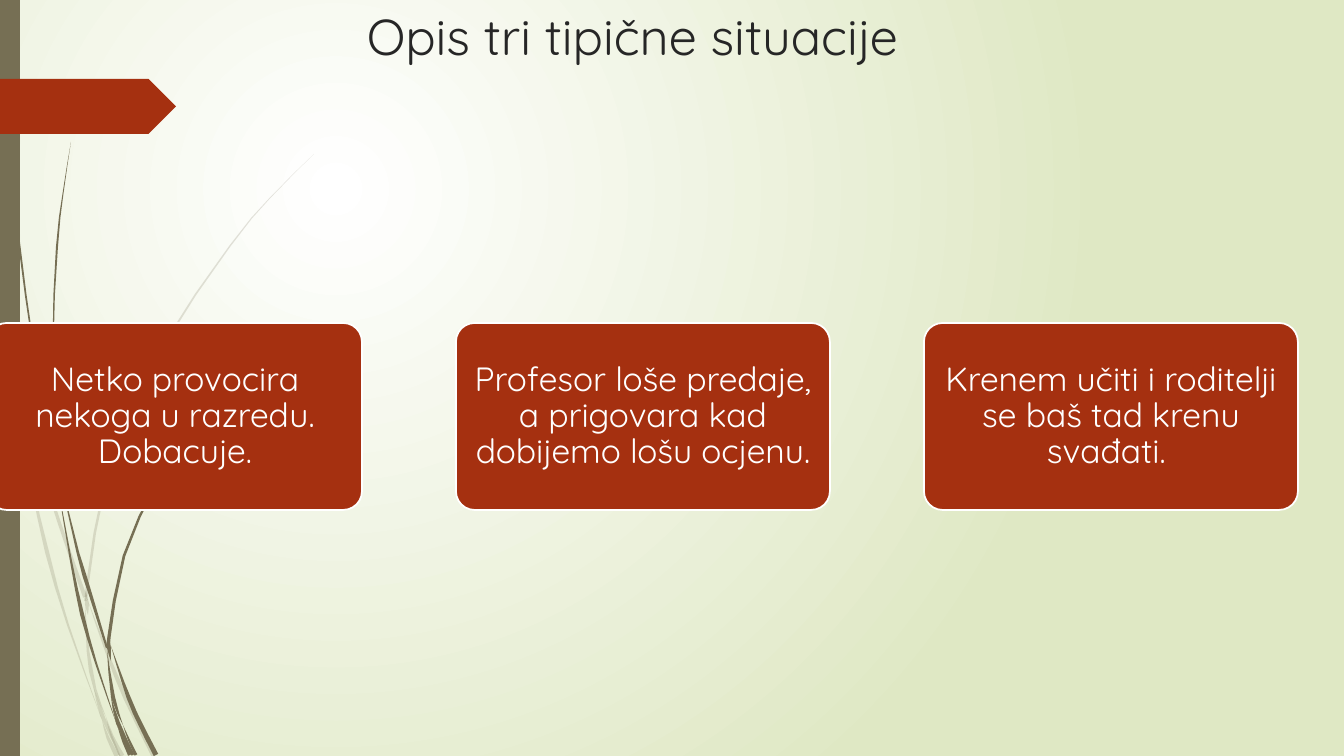
import math

import pptx
import pptx.dml.color
import pptx.enum.shapes
import pptx.enum.text
import pptx.oxml
import pptx.oxml.ns
import pptx.util

TITLE = "Opis tri tipične situacije"
SITUATIONS = [
    "Netko provocira nekoga u razredu. Dobacuje.",
    "Profesor loše predaje, a prigovara kad dobijemo lošu ocjenu.",
    "Krenem učiti i roditelji se baš tad krenu svađati. ",
]
FONT = "Quicksand"
OLIVE, RUST, WHITE, INK, PALE_GREEN = "766F54", "A53010", "FFFFFF", "262626", "DFE8C4"

PALE_BLADES = [
    ((5, 3, 0), [(0, 293), (5, 320), (11, 353)]),
    ((0, 3, 4), [(14, 348), (38, 453), (60, 525), (85, 597)]),
    ((0, 4, 5), [(88, 601), (107, 653), (126, 699), (154, 756)]),
    ((0, 3, 5), [(106, 717), (112, 736), (122, 756)]),
    ((0, 4, 0), [(11, 353), (30, 473), (47, 552), (68, 625), (102, 720)]),
    ((0, 4, 0), [(85, 604), (88, 651), (95, 689), (106, 717)]),
    ((0, 2, 3), [(314, 154), (270, 198), (230, 246), (160, 351),
                 (109, 465), (87, 588), (87, 599)]),
    ((0, 3, 5), [(102, 720), (108, 738), (117, 756)]),
    ((0, 4, 0), [(86, 591), (87, 604), (88, 615)]),
    ((0, 4, 1), [(94, 689), (102, 715), (120, 756)]),
]
DARK_BLADES = [
    ((1, 2, 1), [(3, 0), (6, 110), (18, 234), (35, 358), (57, 485)]),
    ((0, 4, 2), [(60, 476), (78, 553), (91, 596), (107, 648)]),
    ((0, 4, 5), [(111, 646), (123, 682), (135, 713), (156, 755)]),
    ((0, 4, 0), [(57, 481), (71, 561), (82, 614), (96, 663), (118, 728)]),
    ((0, 2, 0), [(71, 142), (63, 194), (57, 247), (53, 352), (60, 476)]),
    ((0, 2, 3), [(123, 725), (129, 740), (136, 755)]),
    ((0, 2, 4), [(262, 347), (232, 376), (206, 409), (159, 479),
                 (124, 556), (109, 637), (109, 645)]),
    ((0, 3, 4), [(118, 728), (124, 742), (130, 755)]),
    ((0, 4, 0), [(107, 650), (113, 697), (123, 725)]),
    ((0, 4, 0), [(109, 636), (109, 648), (111, 661)]),
    ((0, 4, 3), [(111, 697), (118, 723), (133, 755)]),
]
STEPS = 2

WIDTH, HEIGHT = 1344, 756
CARD_LEFT, CARD_TOP, CARD_WIDTH, CARD_HEIGHT, CARD_STEP = -12, 323, 374, 187, 468


def px(length):
    return pptx.util.Emu(round(length * 914400 / 100.8))


def rgb(value):
    return pptx.dml.color.RGBColor.from_string(value)


def paint(shape, color):
    shape.shadow.inherit = False
    shape.fill.solid()
    shape.fill.fore_color.rgb = rgb(color)
    shape.line.fill.background()


def add_block(slide, kind, left, top, width, height, color):
    shape = slide.shapes.add_shape(kind, px(left), px(top), px(width), px(height))
    paint(shape, color)
    return shape


def smooth(points):
    padded = [points[0], *points, points[-1]]
    curve = []
    for before, start, end, after in zip(padded, padded[1:], padded[2:], padded[3:]):
        for step in range(STEPS):
            t = step / STEPS
            curve.append(tuple(
                b + (c - a) * t / 2
                + (2 * a - 5 * b + 4 * c - d) * t**2 / 2
                + (3 * b - a - 3 * c + d) * t**3 / 2
                for a, b, c, d in zip(before, start, end, after)
            ))
    return curve + [points[-1]]


def width_at(widths, t):
    start, middle, end = widths
    if t < 0.5:
        return start + (middle - start) * 2 * t
    return middle + (end - middle) * (2 * t - 1)


def add_blade(slide, widths, points, opacity):
    curve = smooth(points)
    last = len(curve) - 1
    left_edge, right_edge = [], []
    for index, (x, y) in enumerate(curve):
        x1, y1 = curve[max(index - 1, 0)]
        x2, y2 = curve[min(index + 1, last)]
        half = width_at(widths, index / last) / 2
        length = math.hypot(x2 - x1, y2 - y1)
        dx, dy = (y2 - y1) * half / length, (x1 - x2) * half / length
        left_edge.append((px(x - dx), px(y - dy)))
        right_edge.append((px(x + dx), px(y + dy)))
    outline = left_edge + right_edge[::-1]
    builder = slide.shapes.build_freeform(*outline[0])
    builder.add_line_segments(outline[1:])
    shape = builder.convert_to_shape()
    paint(shape, OLIVE)
    color = shape.fill._xPr.find(".//" + pptx.oxml.ns.qn("a:srgbClr"))
    color.append(pptx.oxml.parse_xml(
        f'<a:alpha {pptx.oxml.ns.nsdecls("a")} val="{opacity * 1000}"/>'))


def set_background(slide):
    fill = slide.background.fill
    fill.gradient()
    for stop, color, position in zip(fill.gradient_stops, (WHITE, PALE_GREEN), (0, 1)):
        stop.color.rgb = rgb(color)
        stop.position = position
    linear = slide._element.find(".//" + pptx.oxml.ns.qn("a:lin"))
    radial = pptx.oxml.parse_xml(
        f'<a:path {pptx.oxml.ns.nsdecls("a")} path="circle">'
        '<a:fillToRect l="50000" t="50000" r="100000" b="100000"/></a:path>')
    linear.getparent().replace(linear, radial)


def write(shape, text, size, color, anchor):
    frame = shape.text_frame
    frame.text = text
    frame.word_wrap = True
    frame.auto_size = pptx.enum.text.MSO_AUTO_SIZE.NONE
    frame.vertical_anchor = anchor
    paragraph = frame.paragraphs[0]
    paragraph.alignment = pptx.enum.text.PP_ALIGN.CENTER
    paragraph.font.name = FONT
    paragraph.font.size = pptx.util.Pt(size)
    paragraph.font.color.rgb = rgb(color)
    return frame


def add_card(slide, index, text):
    card = add_block(slide, pptx.enum.shapes.MSO_SHAPE.ROUNDED_RECTANGLE,
                     CARD_LEFT + index * CARD_STEP, CARD_TOP, CARD_WIDTH, CARD_HEIGHT, RUST)
    card.adjustments[0] = 0.1
    card.line.color.rgb = rgb(WHITE)
    card.line.width = pptx.util.Pt(1.25)
    frame = write(card, text, 24, WHITE, pptx.enum.text.MSO_ANCHOR.MIDDLE)
    frame.margin_left = frame.margin_right = px(5)
    frame.margin_top = frame.margin_bottom = px(3)
    frame.paragraphs[0].line_spacing = 0.9


def main():
    presentation = pptx.Presentation()
    presentation.slide_width, presentation.slide_height = px(WIDTH), px(HEIGHT)
    slide = presentation.slides.add_slide(presentation.slide_layouts[5])
    set_background(slide)

    for blades, opacity in ((PALE_BLADES, 20), (DARK_BLADES, 100)):
        for widths, points in blades:
            add_blade(slide, widths, points, opacity)
    add_block(slide, pptx.enum.shapes.MSO_SHAPE.RECTANGLE, 0, 0, 20, HEIGHT, OLIVE)
    add_block(slide, pptx.enum.shapes.MSO_SHAPE.PENTAGON, 0, 79, 176, 55, RUST)

    title = slide.shapes.title
    title.left, title.top, title.width, title.height = px(96), px(0), px(1073), px(99)
    write(title, TITLE, 36, INK, pptx.enum.text.MSO_ANCHOR.TOP)

    for index, text in enumerate(SITUATIONS):
        add_card(slide, index, text)
    presentation.save("out.pptx")


if __name__ == "__main__":
    main()
